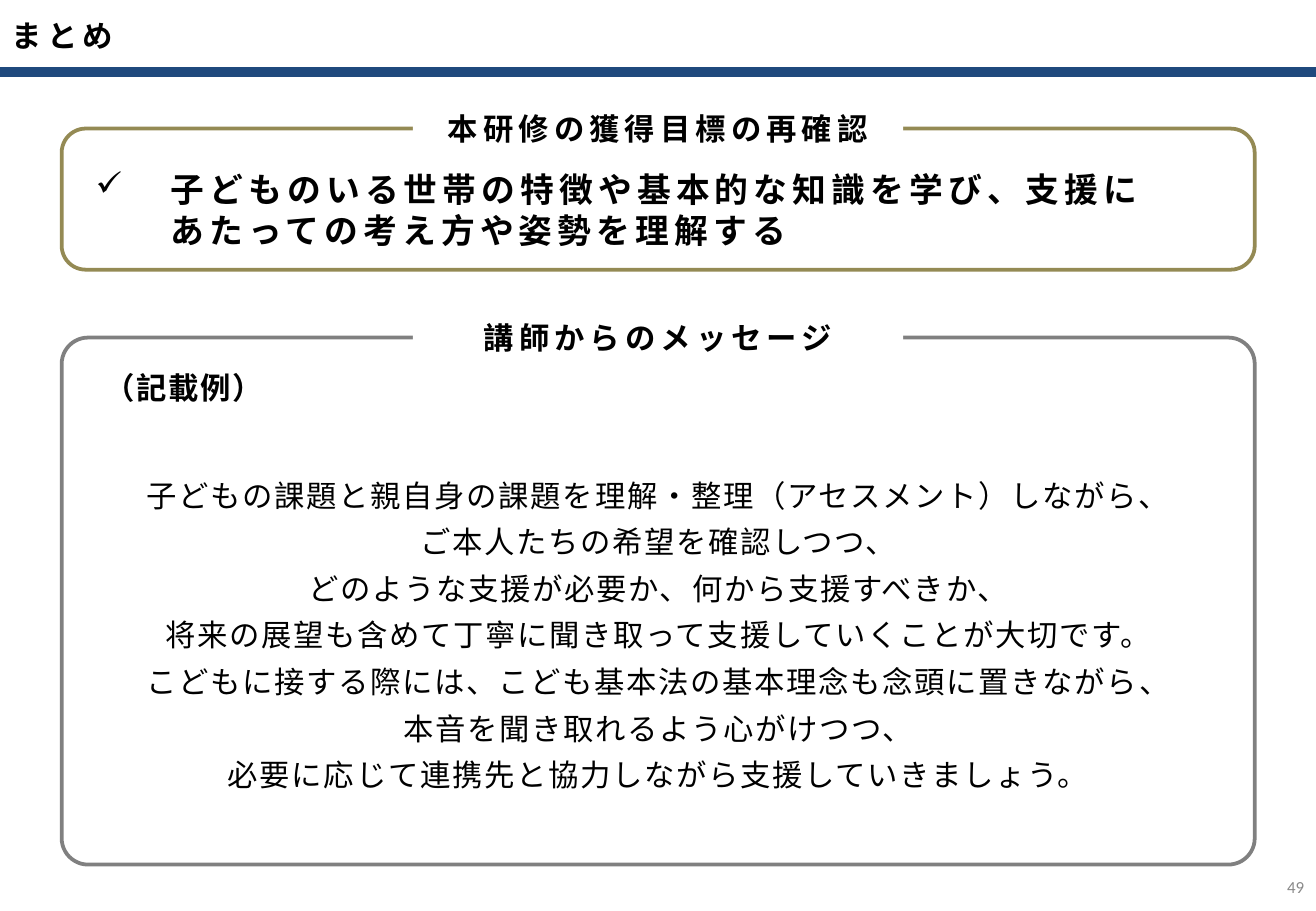
"""Build the summary slide with the training goal and the lecturer's message."""
import pptx
import pptx.dml.color
import pptx.enum.shapes
import pptx.enum.text
import pptx.oxml
import pptx.oxml.ns
import pptx.util

Cm = pptx.util.Cm
Pt = pptx.util.Pt
RGBColor = pptx.dml.color.RGBColor
ALIGN = pptx.enum.text.PP_ALIGN
MIDDLE = pptx.enum.text.MSO_ANCHOR.MIDDLE
SHAPE = pptx.enum.shapes.MSO_SHAPE
qn = pptx.oxml.ns.qn

NAVY = RGBColor(0x1F, 0x49, 0x7D)
OLIVE = RGBColor(0x94, 0x8A, 0x54)
GRAY = RGBColor(0x80, 0x80, 0x80)
PALE = RGBColor(0x89, 0x89, 0x89)
BLACK = RGBColor(0, 0, 0)
WHITE = RGBColor(0xFF, 0xFF, 0xFF)
FONT = "Noto Sans CJK JP"
WIDTH = 27.51

GOAL = ["子どものいる世帯の特徴や基本的な知識を学び、支援に", "あたっての考え方や姿勢を理解する"]
MESSAGE = [
    "子どもの課題と親自身の課題を理解・整理（アセスメント）しながら、",
    "ご本人たちの希望を確認しつつ、",
    "どのような支援が必要か、何から支援すべきか、",
    "将来の展望も含めて丁寧に聞き取って支援していくことが大切です。",
    "こどもに接する際には、こども基本法の基本理念も念頭に置きながら、",
    "本音を聞き取れるよう心がけつつ、",
    "必要に応じて連携先と協力しながら支援していきましょう。",
]


def add_run(p, text, size=18, bold=True, spacing=3, font=FONT, color=BLACK):
    """Add one styled run to a paragraph."""
    r = p.add_run()
    r.text = text
    r.font.size = Pt(size)
    r.font.bold = bold
    r.font.name = font
    r.font.color.rgb = color
    rpr = r.font._element
    rpr.set("spc", str(spacing * 100))
    ea = pptx.oxml.parse_xml(f'<a:ea {pptx.oxml.ns.nsdecls("a")} typeface="{font}"/>')
    rpr.find(qn("a:latin")).addnext(ea)
    p.line_spacing = Pt(size * 1.2)


def add_text_frame(s, x, y, w, h):
    """Add a wrapping, vertically centred text box and return its frame."""
    tf = s.shapes.add_textbox(Cm(x), Cm(y), Cm(w), Cm(h)).text_frame
    tf.word_wrap = True
    tf.vertical_anchor = MIDDLE
    return tf


def add_label(s, x, y, w, h, text, align=ALIGN.LEFT, **style):
    """Add a text box holding one line."""
    p = add_text_frame(s, x, y, w, h).paragraphs[0]
    p.alignment = align
    add_run(p, text, **style)


def add_rule(s, y):
    """Draw the thick line below the title."""
    c = s.shapes.add_connector(
        pptx.enum.shapes.MSO_CONNECTOR.STRAIGHT, 0, Cm(y), Cm(WIDTH), Cm(y))
    c.line.color.rgb = NAVY
    c.line.width = Pt(6)
    c._element.spPr.append(pptx.oxml.parse_xml(f'<a:effectLst {pptx.oxml.ns.nsdecls("a")}/>'))


def add_panel(s, y, h, color, corner, heading):
    """Draw a rounded outline with a heading set into its top edge."""
    sp = s.shapes.add_shape(SHAPE.ROUNDED_RECTANGLE, Cm(1.29), Cm(y), Cm(24.94), Cm(h))
    sp.adjustments[0] = corner
    sp.fill.background()
    sp.line.color.rgb = color
    sp.line.width = Pt(2.25)
    sp.shadow.inherit = False

    sp = s.shapes.add_shape(SHAPE.RECTANGLE, Cm(8.63), Cm(y - 0.51), Cm(10.25), Cm(1.02))
    sp.fill.solid()
    sp.fill.fore_color.rgb = WHITE
    sp.line.fill.background()
    sp.shadow.inherit = False
    tf = sp.text_frame
    tf.vertical_anchor = MIDDLE
    p = tf.paragraphs[0]
    p.alignment = ALIGN.CENTER
    add_run(p, heading)


def add_goal(s):
    """Add the check-marked training goal."""
    p = add_text_frame(s, 1.75, 3.58, 24.03, 1.6).paragraphs[0]
    ppr = p._p.get_or_add_pPr()
    ppr.set("marL", str(Cm(1.57)))
    ppr.set("indent", str(-Cm(1.57)))
    add_run(p, GOAL[0], size=20)
    p.add_line_break()
    add_run(p, GOAL[1], size=20)
    ppr.append(pptx.oxml.parse_xml(f'<a:buChar {pptx.oxml.ns.nsdecls("a")} char="✓"/>'))


def add_message(s):
    """Add the lecturer's message, one paragraph a line."""
    tf = add_text_frame(s, 1.7, 8.31, 24.13, 9.93)
    for i, text in enumerate(MESSAGE):
        p = tf.add_paragraph() if i else tf.paragraphs[0]
        p.alignment = ALIGN.CENTER
        p.space_before = Pt(6)
        add_run(p, text, bold=False, spacing=1)


def main():
    """Build and save the slide."""
    prs = pptx.Presentation()
    prs.slide_width, prs.slide_height = Cm(WIDTH), Cm(19.05)
    s = prs.slides.add_slide(prs.slide_layouts[6])
    add_rule(s, 1.5)
    add_label(s, 0, 0, WIDTH, 1.5, "まとめ")
    add_panel(s, 2.69, 2.95, OLIVE, 0.17, "本研修の獲得目標の再確認")
    add_goal(s)
    add_panel(s, 7.06, 11.02, GRAY, 0.05, "講師からのメッセージ")
    add_label(s, 1.83, 7.59, 4.01, 1.02, "（記載例）", ALIGN.CENTER, spacing=1)
    add_message(s)
    add_label(s, 26.47, 18.03, 1.04, 1.02, "49", ALIGN.RIGHT,
              size=10, bold=False, spacing=0, font="Calibri", color=PALE)
    prs.save("out.pptx")


if __name__ == "__main__":
    main()
